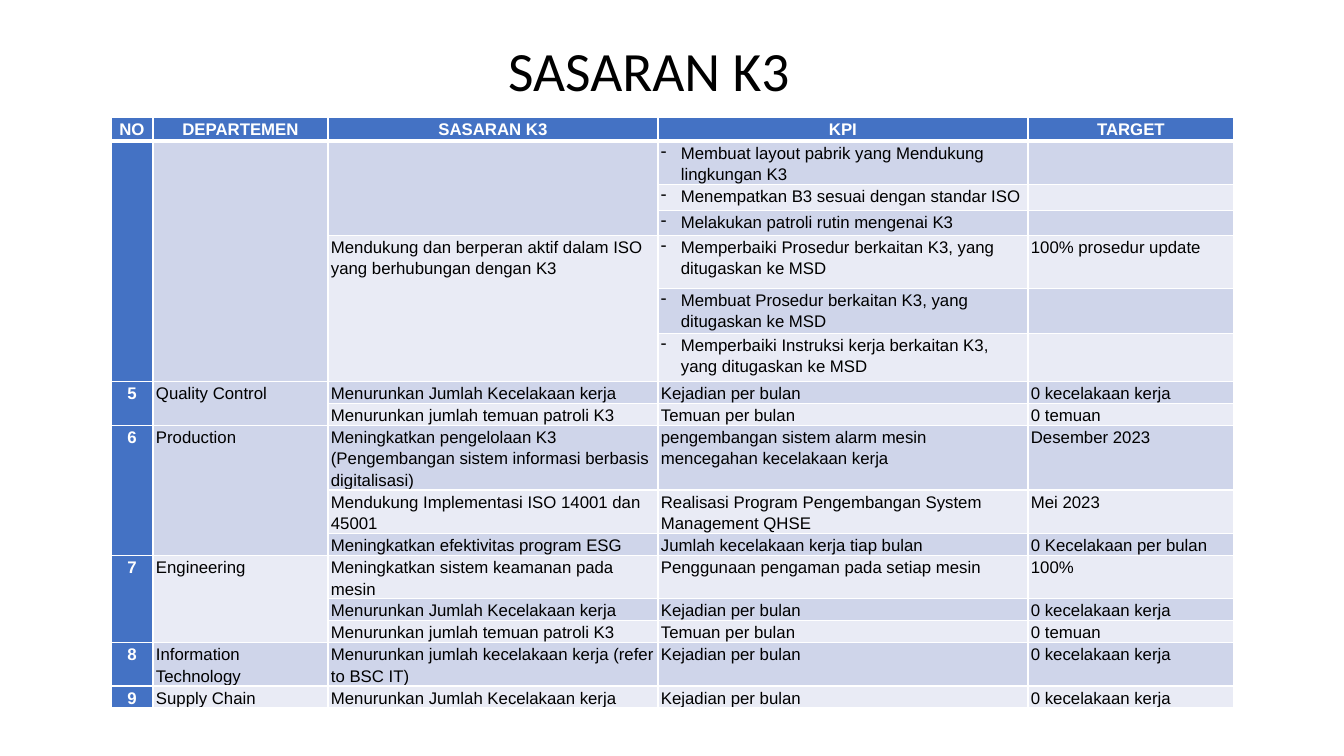
from lxml.etree import SubElement
from pptx import Presentation
from pptx.dml.color import RGBColor
from pptx.enum.text import MSO_ANCHOR, MSO_AUTO_SIZE, PP_ALIGN
from pptx.oxml.ns import qn
from pptx.util import Pt

EMU_PER_PX = 914400 / 100.8
BLUE, BAND_DARK, BAND_LIGHT = "4472C4", "CFD5EA", "E9EBF5"
WHITE, BLACK = "FFFFFF", "000000"
KPI_COLUMN = 3

COLUMN_WIDTHS = [42, 175, 330, 370, 206]
ROW_HEIGHTS = [24, 42, 26, 25, 53, 45, 48, 22, 22, 65, 43, 22, 43, 22, 22, 43, 22]
DASHED_ROWS = range(1, 7)

ACCIDENTS = ("Menurunkan Jumlah Kecelakaan kerja", "Kejadian per bulan", "0 kecelakaan kerja")
FINDINGS = ("Menurunkan jumlah temuan patroli K3", "Temuan per bulan", "0 temuan")

# None continues the cell above
TARGETS = [
    ("NO", "DEPARTEMEN", "SASARAN K3", "KPI", "TARGET"),
    ("", "", "", "Membuat layout pabrik yang Mendukung lingkungan K3", ""),
    (None, None, None, "Menempatkan B3 sesuai dengan standar ISO", ""),
    (None, None, None, "Melakukan patroli rutin mengenai K3", ""),
    (None, None, "Mendukung dan berperan aktif dalam ISO yang berhubungan dengan K3",
     "Memperbaiki Prosedur berkaitan K3, yang ditugaskan ke MSD", "100% prosedur update"),
    (None, None, None, "Membuat Prosedur berkaitan K3, yang ditugaskan ke MSD", ""),
    (None, None, None, "Memperbaiki Instruksi kerja berkaitan K3, yang ditugaskan ke MSD", ""),
    ("5", "Quality Control", *ACCIDENTS),
    (None, None, *FINDINGS),
    ("6", "Production",
     "Meningkatkan pengelolaan K3 (Pengembangan sistem informasi berbasis digitalisasi)",
     "pengembangan sistem alarm mesin mencegahan kecelakaan kerja", "Desember 2023"),
    (None, None, "Mendukung Implementasi ISO 14001 dan 45001",
     "Realisasi Program Pengembangan System Management QHSE", "Mei 2023"),
    (None, None, "Meningkatkan efektivitas program ESG",
     "Jumlah kecelakaan kerja tiap bulan", "0 Kecelakaan per bulan"),
    ("7", "Engineering", "Meningkatkan sistem keamanan pada mesin",
     "Penggunaan pengaman pada setiap mesin", "100%"),
    (None, None, *ACCIDENTS),
    (None, None, *FINDINGS),
    ("8", "Information Technology", "Menurunkan jumlah kecelakaan kerja (refer to BSC IT)",
     "Kejadian per bulan", "0 kecelakaan kerja"),
    ("9", "Supply Chain", *ACCIDENTS),
]


def px(length):
    return round(length * EMU_PER_PX)


def color(hex_code):
    return RGBColor.from_string(hex_code)


def format_font(font, name, size, hex_code, bold=False):
    font.name = name
    font.size = Pt(size)
    font.bold = bold
    font.color.rgb = color(hex_code)


def add_title(slide, wording):
    title = slide.shapes.title
    title.left, title.top, title.width, title.height = px(333), px(52), px(632), px(43)
    frame = title.text_frame
    frame.text = wording
    frame.auto_size = MSO_AUTO_SIZE.NONE
    frame.vertical_anchor = MSO_ANCHOR.MIDDLE
    heading = frame.paragraphs[0]
    heading.alignment = PP_ALIGN.CENTER
    heading.line_spacing = 0.9
    format_font(heading.runs[0].font, "Calibri", 39.6, BLACK)


def add_borders(cell, row):
    """White rules, thicker below the header."""
    properties = cell._tc.get_or_add_tcPr()
    top = 3 if row == 1 else 1
    bottom = 3 if row == 0 else 1
    for side, width in (("L", 1), ("R", 1), ("T", top), ("B", bottom)):
        rule = SubElement(properties, qn(f"a:ln{side}"), w=str(Pt(width)))
        fill = SubElement(rule, qn("a:solidFill"))
        SubElement(fill, qn("a:srgbClr"), val=WHITE)


def add_dash(paragraph):
    properties = paragraph._p.get_or_add_pPr()
    properties.set("marL", str(px(20)))
    properties.set("indent", str(-px(20)))
    SubElement(properties, qn("a:buChar"), char="-")


def fill_cell(cell, row, column, wording):
    emphasized = row == 0 or column == 0
    add_borders(cell, row)
    cell.fill.solid()
    band = BAND_DARK if row % 2 else BAND_LIGHT
    cell.fill.fore_color.rgb = color(BLUE if emphasized else band)
    cell.margin_left = cell.margin_right = px(4 if row == 0 else 3)
    cell.margin_top = cell.margin_bottom = 0
    cell.vertical_anchor = MSO_ANCHOR.TOP

    paragraph = cell.text_frame.paragraphs[0]
    paragraph.line_spacing = 1.15
    paragraph.alignment = PP_ALIGN.CENTER if emphasized else PP_ALIGN.LEFT
    if not wording:
        # Keeps blank cells from stretching their row
        SubElement(paragraph._p, qn("a:endParaRPr"), sz="1200")
        return
    paragraph.text = wording
    if column == KPI_COLUMN and row in DASHED_ROWS:
        add_dash(paragraph)
    format_font(paragraph.runs[0].font, "Arial", 12,
                WHITE if emphasized else BLACK, emphasized)


def merge_continued(table, column):
    """Join each cell with the None entries below it."""
    start = 0
    for row in range(1, len(TARGETS) + 1):
        if row == len(TARGETS) or TARGETS[row][column] is not None:
            if row - start > 1:
                table.cell(start, column).merge(table.cell(row - 1, column))
            start = row


def add_targets(slide):
    table = slide.shapes.add_table(
        len(TARGETS), len(COLUMN_WIDTHS), px(111), px(117),
        px(sum(COLUMN_WIDTHS)), px(sum(ROW_HEIGHTS))).table
    for column, width in zip(table.columns, COLUMN_WIDTHS):
        column.width = px(width)
    for row, height in zip(table.rows, ROW_HEIGHTS):
        row.height = px(height)
    for column in range(len(COLUMN_WIDTHS)):
        merge_continued(table, column)
    for row, entries in enumerate(TARGETS):
        for column, wording in enumerate(entries):
            fill_cell(table.cell(row, column), row, column, wording)


def main():
    deck = Presentation()
    deck.slide_width, deck.slide_height = px(1344), px(756)
    slide = deck.slides.add_slide(deck.slide_layouts[5])
    add_title(slide, "SASARAN K3")
    add_targets(slide)
    deck.save("out.pptx")


if __name__ == "__main__":
    main()
